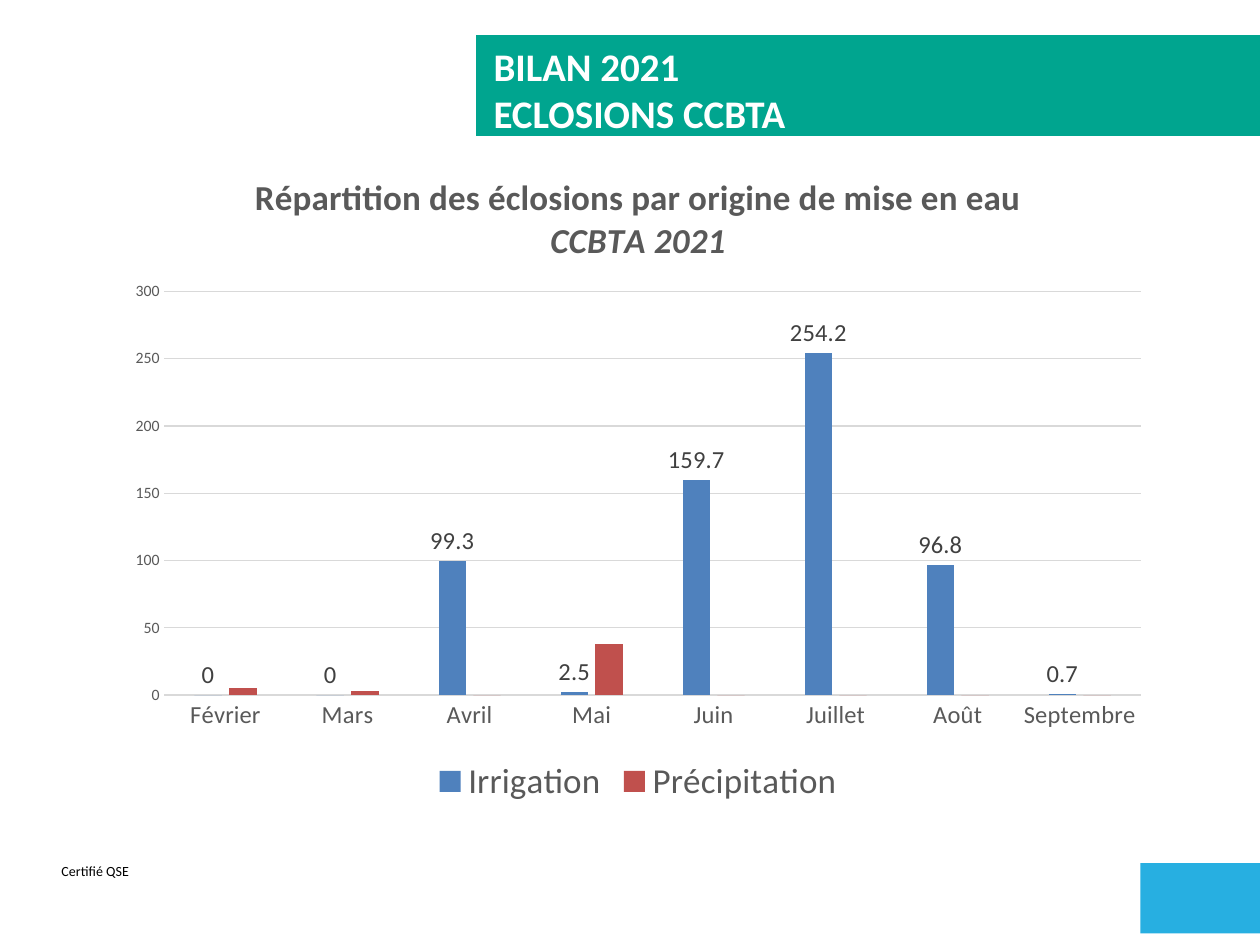
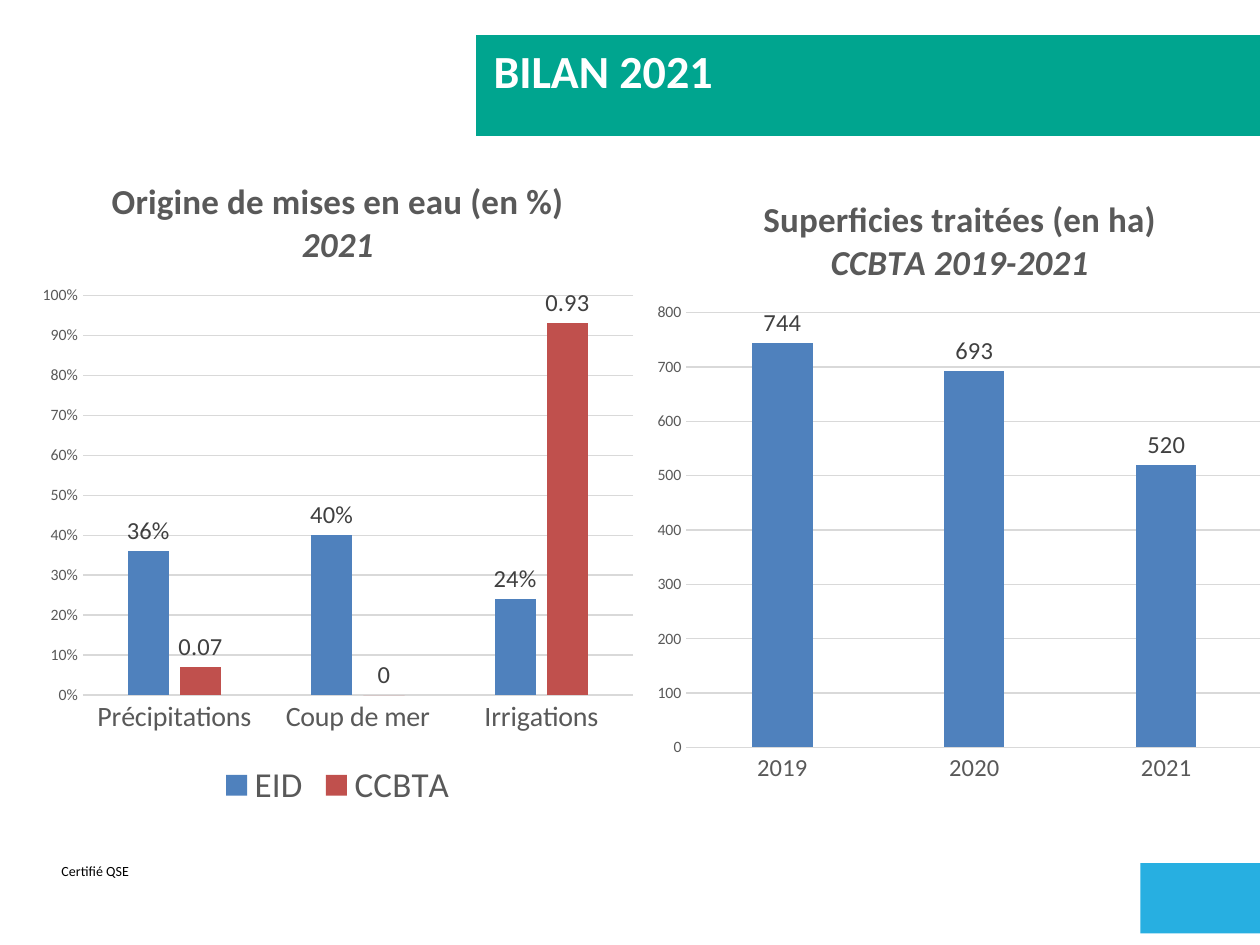
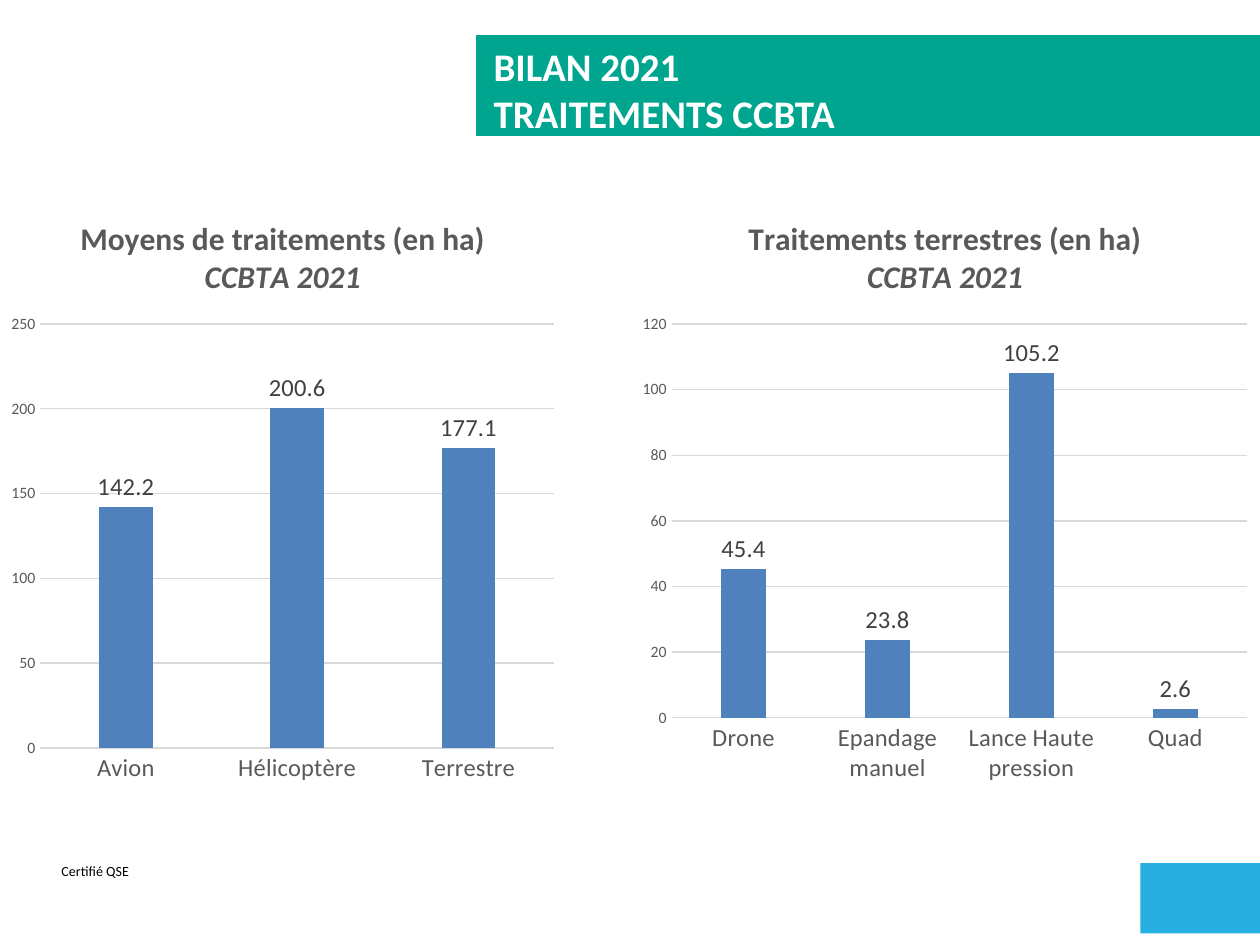
import pptx
import pptx.chart.data
import pptx.dml.color
import pptx.enum.chart
import pptx.enum.shapes
import pptx.enum.text
import pptx.util

Cm = pptx.util.Cm
Pt = pptx.util.Pt
FONT = "Calibri"
COLOURS = {
    "band": "00A58F", "corner": "27AFE1", "white": "FFFFFF", "black": "000000",
    "grey": "595959", "label": "404040", "grid": "D9D9D9",
    "first": "4F81BD", "second": "C0504D",
}
COLOURS = {name: pptx.dml.color.RGBColor.from_string(code) for name, code in COLOURS.items()}

# Each series: name, values, label format (None for no labels)
SLIDES = [
    {"heading": "BILAN 2021\nECLOSIONS CCBTA", "size": 22.3, "charts": [
        {"place": (2.31, 3.02, 21.11, 13.31), "title_size": 20, "category_size": 14,
         "title": "Répartition des éclosions par origine de mise en eau\nCCBTA 2021",
         "categories": ["Février", "Mars", "Avril", "Mai", "Juin", "Juillet", "Août", "Septembre"],
         "axis_format": "General",
         "series": [("Irrigation", [0, 0, 99.3, 2.5, 159.7, 254.2, 96.8, 0.7], "General"),
                    ("Précipitation", [5, 3, 0, 38, 0, 0, 0, 0], None)]},
    ]},
    {"heading": "BILAN 2021", "size": 26.3, "charts": [
        {"place": (0.61, 3.1, 12.4, 13.31), "title_size": 20, "category_size": 16,
         "title": "Origine de mises en eau (en %)\n2021",
         "categories": ["Précipitations", "Coup de mer", "Irrigations"],
         "axis_format": "0%",
         "series": [("EID", [0.36, 0.4, 0.24], "0%"),
                    ("CCBTA", [0.07, 0, 0.93], "General")]},
        {"place": (13, 3.48, 12.7, 12.55), "title_size": 20, "category_size": 14,
         "title": "Superficies traitées (en ha)\nCCBTA 2019-2021",
         "categories": ["2019", "2020", "2021"],
         "axis_format": "General",
         "series": [("Series 1", [744, 693, 520], "General")]},
    ]},
    {"heading": "BILAN 2021\nTRAITEMENTS CCBTA", "size": 22.3, "charts": [
        {"place": (0, 3.94, 11.4, 12.09), "title_size": 18, "category_size": 14,
         "title": "Moyens de traitements (en ha)\nCCBTA 2021",
         "categories": ["Avion", "Hélicoptère", "Terrestre"],
         "axis_format": "General",
         "series": [("Series 1", [142.2, 200.6, 177.1], "General")]},
        {"place": (12.7, 3.94, 12.7, 12.09), "title_size": 18, "category_size": 14,
         "title": "Traitements terrestres (en ha)\nCCBTA 2021",
         "categories": ["Drone", "Epandage manuel", "Lance Haute pression", "Quad"],
         "axis_format": "General",
         "series": [("Series 1", [45.4, 23.8, 105.2, 2.6], "General")]},
    ]},
]


def style_font(font, size, colour, bold=False):
    font.name = FONT
    font.size = Pt(size)
    font.bold = bold
    font.color.rgb = COLOURS[colour]


def add_text(page, place, text, size, colour, bold=False):
    box = page.shapes.add_textbox(*map(Cm, place))
    box.text_frame.word_wrap = True
    box.text_frame.text = text
    for para in box.text_frame.paragraphs:
        for span in para.runs:
            style_font(span.font, size, colour, bold)
    return box


deck = pptx.Presentation()
deck.slide_width, deck.slide_height = Cm(25.4), Cm(19.05)

for content in SLIDES:
    page = deck.slides.add_slide(deck.slide_layouts[6])

    # Heading band, corner block and footer
    for colour, place in [("band", (9.6, 0.71, 16.05, 2.03)),
                          ("corner", (22.99, 17.4, 2.41, 1.42))]:
        block = page.shapes.add_shape(pptx.enum.shapes.MSO_SHAPE.RECTANGLE, *map(Cm, place))
        block.shadow.inherit = False
        block.fill.solid()
        block.fill.fore_color.rgb = COLOURS[colour]
        block.line.fill.background()
    footer = add_text(page, (0.99, 17.27, 3, 0.61), "Certifié QSE", 8, "black")
    footer.text_frame.auto_size = pptx.enum.text.MSO_AUTO_SIZE.SHAPE_TO_FIT_TEXT

    for details in content["charts"]:
        # Chart and its data
        data = pptx.chart.data.CategoryChartData()
        data.categories = details["categories"]
        for name, values, label_format in details["series"]:
            data.add_series(name, values, label_format or "General")
        chart = page.shapes.add_chart(pptx.enum.chart.XL_CHART_TYPE.COLUMN_CLUSTERED,
                                      *map(Cm, details["place"]), data).chart
        style_font(chart.font, 10, "black")

        # Title, with its second line in italics
        chart.has_title = True
        title = chart.chart_title
        title.include_in_layout = False
        title.text_frame.text = details["title"]
        for number, para in enumerate(title.text_frame.paragraphs):
            for span in para.runs:
                style_font(span.font, details["title_size"], "grey", bold=True)
                span.font.italic = number == 1

        # Legend, where there are two series
        chart.has_legend = len(details["series"]) > 1
        if chart.has_legend:
            chart.legend.position = pptx.enum.chart.XL_LEGEND_POSITION.BOTTOM
            chart.legend.include_in_layout = False
            style_font(chart.legend.font, 20, "grey")

        # Axes
        for axis, size in [(chart.category_axis, details["category_size"]),
                           (chart.value_axis, 9)]:
            axis.major_tick_mark = pptx.enum.chart.XL_TICK_MARK.NONE
            axis.minor_tick_mark = pptx.enum.chart.XL_TICK_MARK.NONE
            style_font(axis.tick_labels.font, size, "grey")
        chart.value_axis.tick_labels.number_format = details["axis_format"]
        chart.value_axis.tick_labels.number_format_is_linked = False
        chart.value_axis.format.line.fill.background()
        chart.value_axis.has_major_gridlines = True
        for line in (chart.category_axis.format.line,
                     chart.value_axis.major_gridlines.format.line):
            line.color.rgb = COLOURS["grid"]
            line.width = Pt(0.75)

        # Columns and their labels
        plot = chart.plots[0]
        plot.vary_by_categories = False
        plot.gap_width = 219
        plot.overlap = -27
        for series, colour, (_, _, label_format) in zip(
                plot.series, ("first", "second"), details["series"]):
            series.invert_if_negative = False
            series.format.fill.solid()
            series.format.fill.fore_color.rgb = COLOURS[colour]
            if label_format:
                labels = series.data_labels
                labels.show_value = True
                labels.number_format = label_format
                labels.number_format_is_linked = False
                labels.position = pptx.enum.chart.XL_LABEL_POSITION.OUTSIDE_END
                style_font(labels.font, 14, "label")

    # Heading
    add_text(page, (9.7, 0.74, 16, 3.2), content["heading"], content["size"], "white", bold=True)

deck.save("out.pptx")
